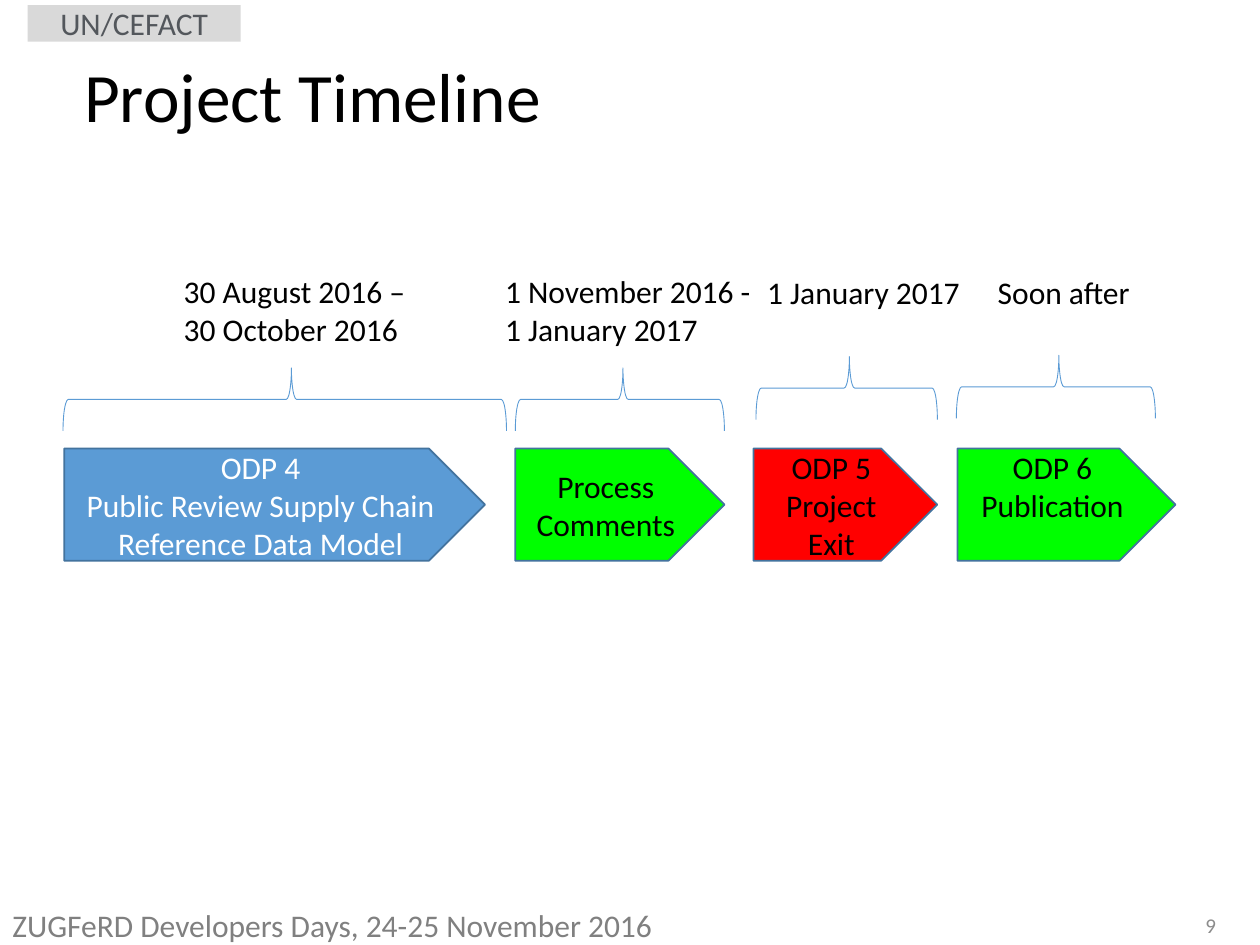
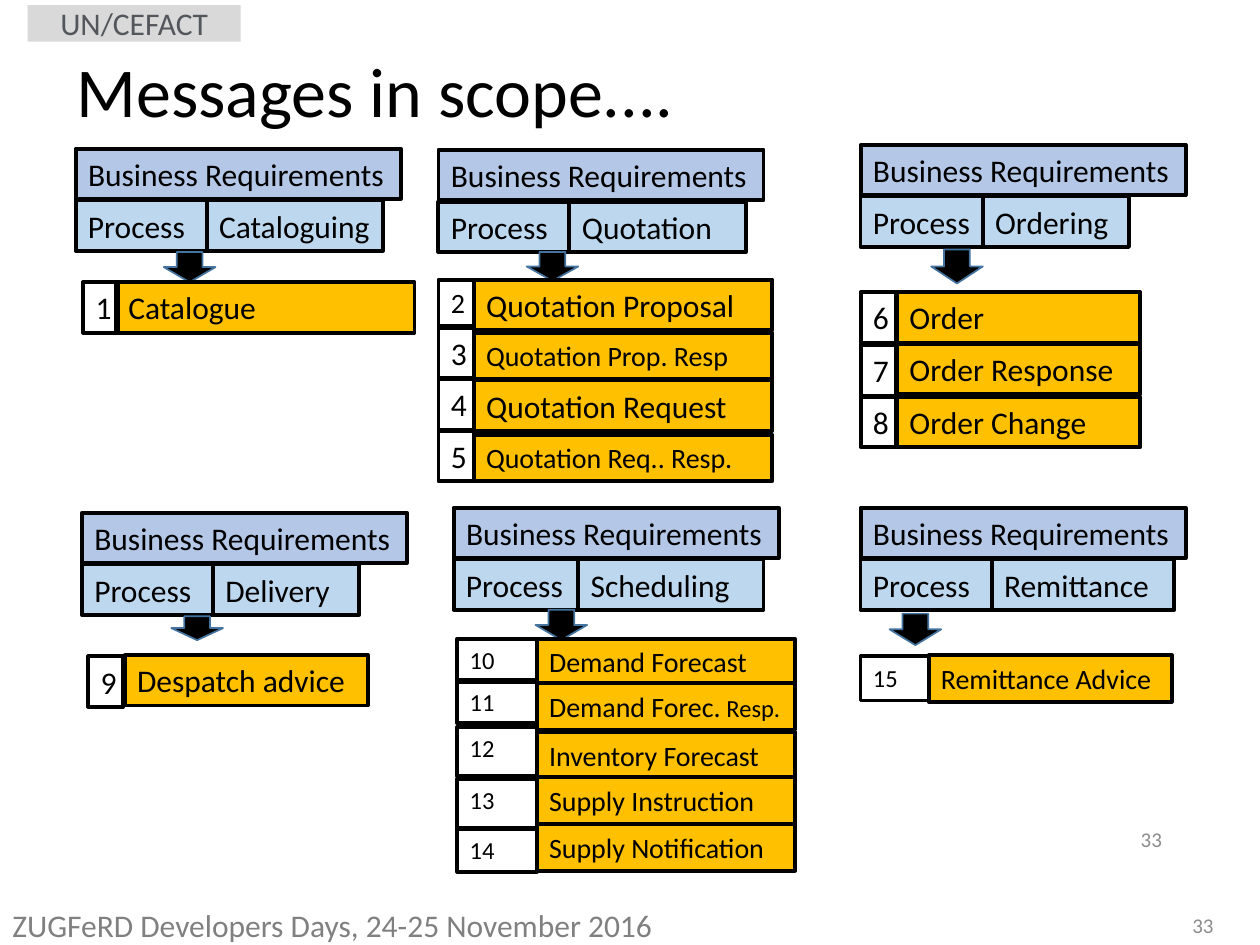
from pptx import Presentation
from pptx.dml.color import RGBColor
from pptx.enum.shapes import MSO_SHAPE
from pptx.enum.text import MSO_ANCHOR, PP_ALIGN
from pptx.util import Inches, Pt

# Shared style and wording
FONT = "Calibri"
BLACK, WHITE = "000000", "FFFFFF"
EDGE = "43739E"
BAND, BAND_TEXT = "D9D9D9", "53575C"
HEADER_FILL, PROCESS_FILL, MESSAGE_FILL = "B4C7E7", "BDD7EE", "FFC000"
BLUE, GREEN, RED = "5B9BD5", "00FF00", "FF0000"
BAND_NAME = "UN/CEFACT"
FOOTER = "ZUGFeRD Developers Days, 24-25 November 2016"
ROW_HEIGHT = 0.4
HEIGHT_BY_SIZE = {18: 0.4, 16: 0.37}

# Timeline steps: arrow left and width; date left, top, width;
# brace as centre x, centre y, length
STEPS = [
    dict(text=["ODP 4", "Public Review Supply Chain Reference Data Model"],
         arrow=(0.51, 3.34), fill=BLUE, color=WHITE,
         dates=["30 August 2016 –", "30 October 2016"],
         date_at=(1.36, 2.11, 2.42), brace=(2.26, 3.17, 3.52)),
    dict(text=["Process Comments"],
         arrow=(4.09, 1.66), fill=GREEN, color=BLACK,
         dates=["1 November 2016 -", "1 January 2017"],
         date_at=(3.91, 2.11, 2.98), brace=(4.92, 3.17, 1.66)),
    dict(text=["ODP 5", "Project Exit"],
         arrow=(5.98, 1.46), fill=RED, color=BLACK,
         dates=["1 January 2017"],
         date_at=(5.99, 2.12, 2.98), brace=(6.72, 3.08, 1.44)),
    dict(text=["ODP 6", "Publication"],
         arrow=(7.6, 1.73), fill=GREEN, color=BLACK, bottom=0.35,
         dates=["Soon after"],
         date_at=(7.82, 2.12, 1.61), brace=(8.38, 3.07, 1.58)),
]

# Message groups: corner of the header; process name with left and width;
# arrow left, top, height; number and message columns as left, width.
# Rows: number, its top, height and size; message, its top and size
GROUPS = [
    dict(corner=(0.6, 1.18), process=("Cataloguing", 1.64, 1.4),
         arrow=(1.3, 2, 0.24), numbers=(0.66, 0.28), messages=(0.92, 2.37),
         rows=[("1", 2.24, 0.4, 18, "Catalogue", 2.24, 18)]),
    dict(corner=(3.48, 1.19), process=("Quotation", 4.52, 1.4),
         arrow=(4.18, 2, 0.23), numbers=(3.48, 0.28), messages=(3.76, 2.37),
         rows=[("2", 2.22, 0.37, 16, "Quotation Proposal", 2.22, 18),
               ("3", 2.6, 0.4, 18, "Quotation Prop. Resp", 2.64, 16),
               ("4", 3.01, 0.4, 18, "Quotation Request", 3.02, 18),
               ("5", 3.42, 0.4, 18, "Quotation Req.. Resp.", 3.45, 16)]),
    dict(corner=(6.83, 1.15), process=("Ordering", 7.8, 1.16),
         arrow=(7.39, 1.98, 0.27), numbers=(6.83, 0.28), messages=(7.12, 1.93),
         rows=[("6", 2.32, 0.4, 18, "Order", 2.32, 18),
               ("7", 2.74, 0.4, 18, "Order Response", 2.73, 18),
               ("8", 3.15, 0.4, 18, "Order Change", 3.15, 18)]),
    dict(corner=(0.65, 4.07), process=("Delivery", 1.69, 1.16),
         arrow=(1.36, 4.89, 0.19), numbers=(0.7, 0.28), messages=(0.99, 1.93),
         rows=[("9", 5.21, 0.4, 18, "Despatch advice", 5.2, 18)]),
    dict(corner=(3.6, 4.03), process=("Scheduling", 4.59, 1.47),
         arrow=(4.25, 4.84, 0.24), numbers=(3.63, 0.63), messages=(4.26, 2.05),
         rows=[("10", 5.07, 0.34, 14, "Demand Forecast", 5.07, 16),
               ("11", 5.4, 0.34, 14,
                [("Demand Forec.", 16), (" Resp.", 14)], 5.42, 16),
               ("12", 5.77, 0.39, 14, "Inventory Forecast", 5.81, 16),
               ("13", 6.18, 0.39, 14, "Supply Instruction", 6.17, 16),
               ("14", 6.58, 0.34, 14, "Supply Notification", 6.54, 16)]),
    dict(corner=(6.83, 4.03), process=("Remittance", 7.87, 1.45),
         arrow=(7.06, 4.87, 0.25), numbers=(6.83, 0.54), messages=(7.37, 1.93),
         rows=[("15", 5.21, 0.35, 14, "Remittance Advice", 5.2, 16)]),
]


def rgb(value):
    return RGBColor.from_string(value)


def write(box, lines, size=18, color=BLACK, align=PP_ALIGN.LEFT,
          anchor=MSO_ANCHOR.TOP, wrap=True, spacing=None, bottom=0.05):
    """Fill a box; a line is a string or a list of (text, size) spans."""
    frame = box.text_frame
    frame.word_wrap = wrap
    frame.vertical_anchor = anchor
    frame.margin_bottom = Inches(bottom)
    for index, line in enumerate(lines):
        para = frame.paragraphs[0] if index == 0 else frame.add_paragraph()
        para.alignment = align
        if spacing:
            para.line_spacing = spacing
        for text, points in [(line, size)] if isinstance(line, str) else line:
            span = para.add_run()
            span.text = text
            span.font.name = FONT
            span.font.size = Pt(points)
            span.font.color.rgb = rgb(color)


def add_text(page, at, lines, **style):
    box = page.shapes.add_textbox(*map(Inches, at))
    write(box, lines, **style)


def add_shape(page, kind, at, fill=None, line=None, width=1.0):
    shape = page.shapes.add_shape(kind, *map(Inches, at))
    shape.shadow.inherit = False
    if fill:
        shape.fill.solid()
        shape.fill.fore_color.rgb = rgb(fill)
    else:
        shape.fill.background()
    if line:
        shape.line.color.rgb = rgb(line)
        shape.line.width = Pt(width)
    else:
        shape.line.fill.background()
    return shape


def add_cell(page, at, line, fill=None, **style):
    cell = add_shape(page, MSO_SHAPE.RECTANGLE, at, fill, BLACK, 2.25)
    write(cell, [line], **style)


def add_number(page, number, at):
    add_text(page, at, [number], size=12, color="8C8C8C",
             align=PP_ALIGN.RIGHT, anchor=MSO_ANCHOR.MIDDLE)


def add_page(deck, title, title_at, title_size, number, number_left):
    page = deck.slides.add_slide(deck.slide_layouts[6])
    band = add_shape(page, MSO_SHAPE.RECTANGLE, (0.22, 0.04, 1.69, 0.29), BAND)
    write(band, [BAND_NAME], color=BAND_TEXT, align=PP_ALIGN.CENTER,
          anchor=MSO_ANCHOR.MIDDLE)
    add_text(page, title_at, [title], size=title_size, spacing=0.9,
             anchor=MSO_ANCHOR.MIDDLE)
    add_number(page, number, (number_left, 7.14, 3, 0.4))
    add_text(page, (0, 7.14, 5.68, 0.4), [FOOTER], color="808080")
    return page


def add_step(page, step):
    left, width = step["arrow"]
    arrow = add_shape(page, MSO_SHAPE.PENTAGON, (left, 3.56, width, 0.89),
                      step["fill"], EDGE)
    write(arrow, step["text"], color=step["color"], align=PP_ALIGN.CENTER,
          anchor=MSO_ANCHOR.MIDDLE, bottom=step.get("bottom", 0.05))
    height = 0.1 + 0.3 * len(step["dates"])
    add_text(page, (*step["date_at"], height), step["dates"])

    # The brace is drawn upright, then turned about its centre
    center, middle, length = step["brace"]
    depth = 0.5
    brace = add_shape(page, MSO_SHAPE.RIGHT_BRACE,
                      (center - depth / 2, middle - length / 2, depth, length),
                      line=BLUE, width=0.5)
    brace.adjustments[0] = 0.083
    brace.adjustments[1] = 0.515
    brace.rotation = 270


def add_group(page, group):
    left, top = group["corner"]
    name, name_left, name_width = group["process"]
    second = top + ROW_HEIGHT + 0.01
    add_cell(page, (left, top, 2.58, ROW_HEIGHT), "Business Requirements",
             HEADER_FILL, wrap=False)
    add_cell(page, (left, second, 1.04, ROW_HEIGHT), "Process",
             PROCESS_FILL, wrap=False)
    add_cell(page, (name_left, second, name_width, ROW_HEIGHT), name,
             PROCESS_FILL)

    arrow_left, arrow_top, arrow_height = group["arrow"]
    add_shape(page, MSO_SHAPE.DOWN_ARROW,
              (arrow_left, arrow_top, 0.41, arrow_height), BLACK, EDGE)

    number_left, number_width = group["numbers"]
    message_left, message_width = group["messages"]
    for number, y, height, size, message, message_y, message_size in group["rows"]:
        add_cell(page, (message_left, message_y, message_width,
                        HEIGHT_BY_SIZE[message_size]),
                 message, MESSAGE_FILL, size=message_size)
        add_cell(page, (number_left, y, number_width, height), number, size=size)


def main():
    deck = Presentation()
    deck.slide_width, deck.slide_height = Inches(10), Inches(7.5)

    # Timeline
    page = add_page(deck, "Project Timeline", (0.57, 0.51, 8.67, 0.57), 39.6,
                    "9", 6.75)
    for step in STEPS:
        add_step(page, step)

    # Messages
    page = add_page(deck, "Messages in scope....", (0.51, 0.03, 9.49, 1.45), 40,
                    "33", 6.73)
    add_number(page, "33", (7.07, 6.46, 2.25, 0.4))
    for group in GROUPS:
        add_group(page, group)

    deck.save("out.pptx")


if __name__ == "__main__":
    main()
